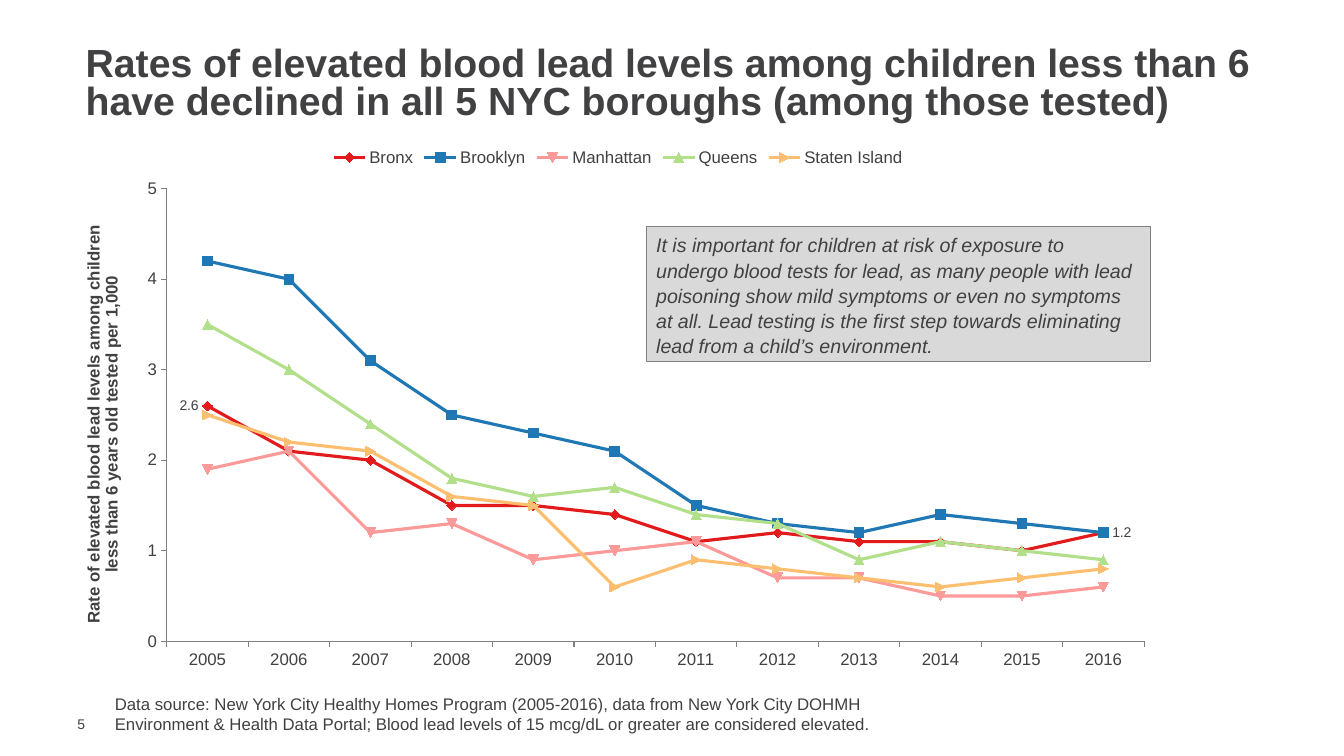
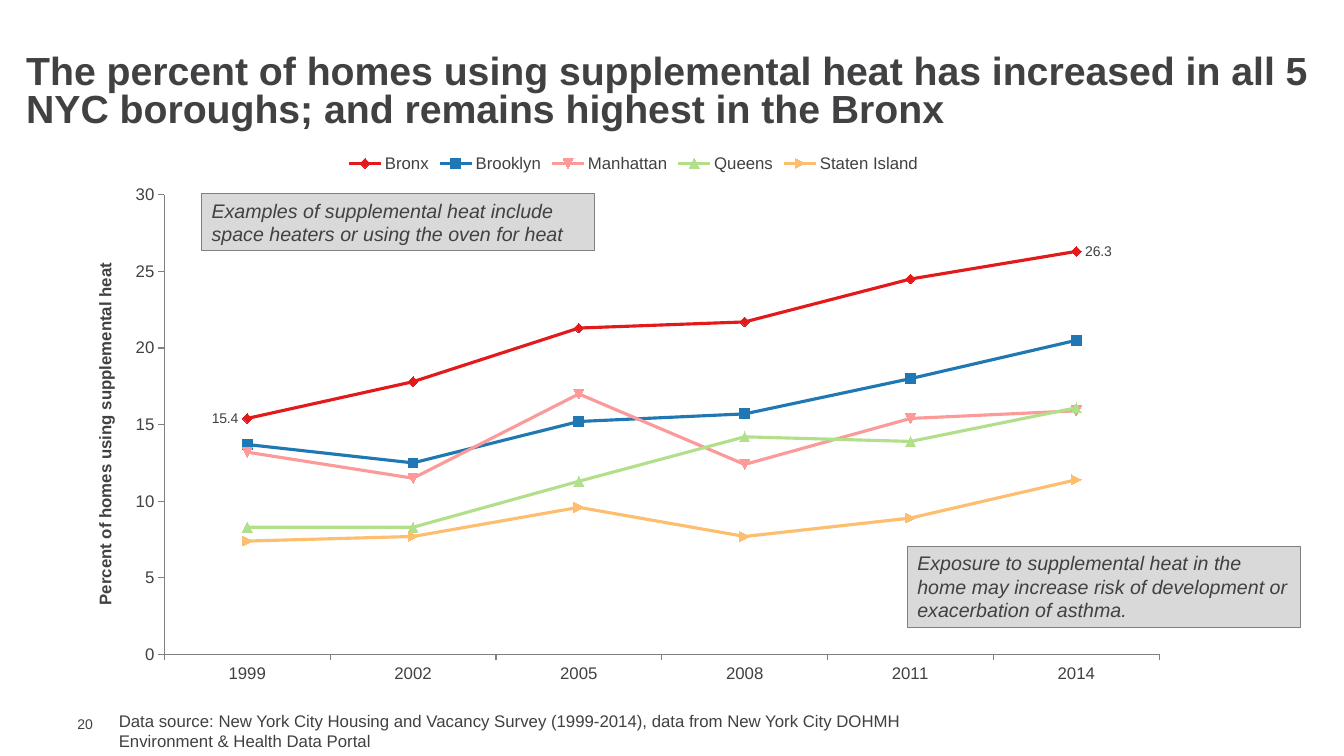
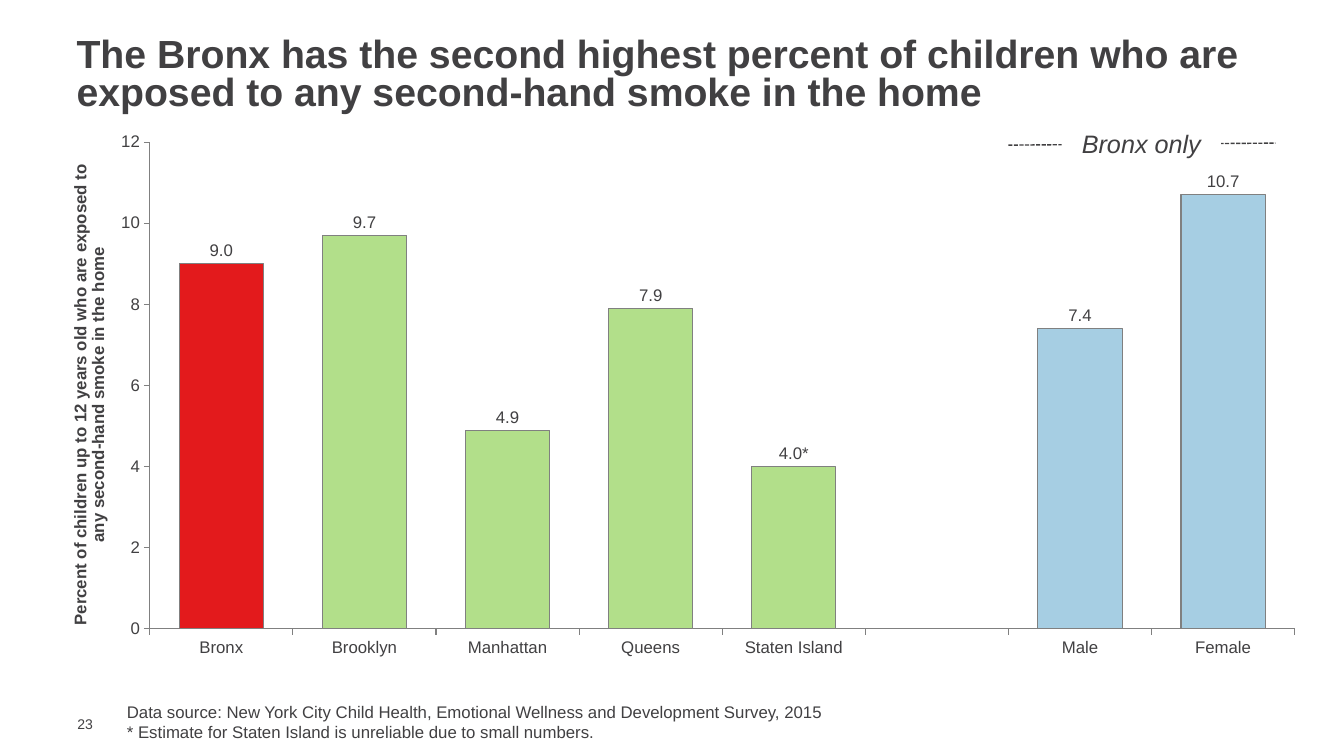
import pptx
import pptx.chart.data
import pptx.dml.color
import pptx.enum.chart
import pptx.enum.dml
import pptx.enum.shapes
import pptx.enum.text
import pptx.oxml
import pptx.oxml.ns
import pptx.util

Inches = pptx.util.Inches
Pt = pptx.util.Pt
RGBColor = pptx.dml.color.RGBColor
ALIGN = pptx.enum.text.PP_ALIGN
ANCHOR = pptx.enum.text.MSO_ANCHOR
KIND = pptx.enum.chart.XL_CHART_TYPE
MARK = pptx.enum.chart.XL_MARKER_STYLE
SIDE = pptx.enum.chart.XL_LABEL_POSITION

FONT = "Arial"
INK = RGBColor(0x41, 0x40, 0x42)
GRAY = RGBColor(0x80, 0x80, 0x80)
PALE = RGBColor(0xD9, 0xD9, 0xD9)
WHITE = RGBColor(0xFF, 0xFF, 0xFF)
RED = RGBColor(0xE3, 0x1A, 0x1C)
BLUE = RGBColor(0x1F, 0x78, 0xB4)
PINK = RGBColor(0xFB, 0x9A, 0x99)
GREEN = RGBColor(0xB2, 0xDF, 0x8A)
GOLD = RGBColor(0xFD, 0xBF, 0x6F)
SKY = RGBColor(0xA6, 0xCE, 0xE3)

TOWNS = ["Bronx", "Brooklyn", "Manhattan", "Queens", "Staten Island"]
LOOKS = [(RED, MARK.DIAMOND), (BLUE, MARK.SQUARE), (PINK, MARK.AUTOMATIC),
         (GREEN, MARK.AUTOMATIC), (GOLD, MARK.AUTOMATIC)]


def style(font, size, bold=False, italic=False):
    font.name = FONT
    font.size = Pt(size)
    font.bold = bold
    font.italic = italic
    font.color.rgb = INK


def write(frame, text, size=12, bold=False, italic=False, align=ALIGN.LEFT,
          space=None, anchor=ANCHOR.TOP):
    frame.word_wrap = True
    frame.vertical_anchor = anchor
    for i, line in enumerate(text.split("\n")):
        para = frame.paragraphs[0] if i == 0 else frame.add_paragraph()
        para.alignment = align
        if space:
            para.line_spacing = space
        run = para.add_run()
        run.text = line
        style(run.font, size, bold, italic)


def add_text(slide, text, left, top, width, height, **look):
    box = slide.shapes.add_textbox(Inches(left), Inches(top), Inches(width), Inches(height))
    write(box.text_frame, text, **look)
    return box.text_frame


def add_note(slide, text, left, top, width, height, fill=PALE, edge=GRAY, size=14, **look):
    box = slide.shapes.add_shape(pptx.enum.shapes.MSO_SHAPE.RECTANGLE, Inches(left),
                                 Inches(top), Inches(width), Inches(height))
    box.shadow.inherit = False
    box.fill.solid()
    box.fill.fore_color.rgb = fill
    if edge is None:
        box.line.fill.background()
    else:
        box.line.color.rgb = edge
        box.line.width = Pt(0.75)
    write(box.text_frame, text, size=size, italic=True, **look)


def add_dash(slide, start, end):
    dash = slide.shapes.add_connector(pptx.enum.shapes.MSO_CONNECTOR.STRAIGHT,
                                      *(Inches(n) for n in start + end))
    dash.line.color.rgb = INK
    dash.line.width = Pt(1)
    dash.line.dash_style = pptx.enum.dml.MSO_LINE.SQUARE_DOT
    dash._element.spPr.append(pptx.oxml.parse_xml(
        '<a:effectLst %s/>' % pptx.oxml.ns.nsdecls("a")))


def start_slide(deck, title, spot, number, source, base):
    slide = deck.slides.add_slide(deck.slide_layouts[5])
    head = slide.shapes.title
    left, top = spot
    head.left, head.top = Inches(left), Inches(top)
    head.width, head.height = Inches(13.33 - left), Inches(0.85)
    write(head.text_frame, title, size=28, bold=True, space=0.8, anchor=ANCHOR.MIDDLE)
    page = add_text(slide, number, 0.67, 7.1, 0.43, 0.17, size=10, anchor=ANCHOR.MIDDLE)
    page.margin_top = page.margin_bottom = page.margin_right = 0
    add_text(slide, source, *base, 9.92, 0.5)
    return slide


def place_plot(chart, frame):
    area = chart._chartSpace.chart.plotArea
    for old in area.findall(pptx.oxml.ns.qn("c:layout")):
        area.remove(old)
    sizes = "".join('<c:%s val="%s"/>' % pair for pair in zip("xywh", frame))
    area.insert(0, pptx.oxml.parse_xml(
        '<c:layout %s><c:manualLayout><c:layoutTarget val="inner"/>'
        '<c:xMode val="edge"/><c:yMode val="edge"/>%s</c:manualLayout></c:layout>'
        % (pptx.oxml.ns.nsdecls("c"), sizes)))


def add_chart(slide, kind, spot, cats, rows, title, top, step, plot, form="#,##0"):
    data = pptx.chart.data.CategoryChartData()
    data.categories = cats
    for name, values in rows:
        data.add_series(name, values)
    chart = slide.shapes.add_chart(kind, *(Inches(n) for n in spot), data).chart
    chart.has_title = False
    chart.has_legend = False
    style(chart.font, 12)
    place_plot(chart, plot)
    for axis in (chart.category_axis, chart.value_axis):
        axis.has_major_gridlines = False
        axis.major_tick_mark = pptx.enum.chart.XL_TICK_MARK.OUTSIDE
        axis.minor_tick_mark = pptx.enum.chart.XL_TICK_MARK.NONE
        axis.format.line.color.rgb = GRAY
        axis.format.line.width = Pt(0.75)
        style(axis.tick_labels.font, 12)
    scale = chart.value_axis
    scale.minimum_scale, scale.maximum_scale, scale.major_unit = 0, top, step
    scale.tick_labels.number_format = form
    scale.tick_labels.number_format_is_linked = False
    frame = scale.axis_title.text_frame
    run = frame.paragraphs[0].add_run()
    run.text = title
    style(run.font, 12, bold=True)
    frame._txBody.bodyPr.set("rot", "-5400000")
    return chart


def add_lines(slide, spot, years, values, title, top, step, plot):
    chart = add_chart(slide, KIND.LINE_MARKERS, spot, years, list(zip(TOWNS, values)),
                      title, top, step, plot)
    chart.has_legend = True
    chart.legend.position = pptx.enum.chart.XL_LEGEND_POSITION.TOP
    chart.legend.include_in_layout = False
    style(chart.legend.font, 12)
    for row, (color, mark) in zip(chart.plots[0].series, LOOKS):
        row.smooth = False
        row.format.line.color.rgb = color
        row.format.line.width = Pt(2.25)
        row.marker.style = mark
        row.marker.size = 7
        row.marker.format.fill.solid()
        row.marker.format.fill.fore_color.rgb = color
        row.marker.format.line.color.rgb = color
    bronx = chart.plots[0].series[0]
    bronx.data_labels.show_value = False
    for i, side in ((0, SIDE.LEFT), (len(years) - 1, SIDE.RIGHT)):
        label = bronx.points[i].data_label
        style(label.font, 10)
        label.position = side


def add_bars(slide, spot, cats, values, title, top, step, plot):
    chart = add_chart(slide, KIND.COLUMN_CLUSTERED, spot, cats, [("Series 1", values)],
                      title, top, step, plot, form="0")
    bars = chart.plots[0]
    bars.gap_width = 70
    bars.vary_by_categories = False
    row = bars.series[0]
    tints = {0: RED, 6: SKY, 7: SKY}
    for part, tint in [(row, GREEN)] + [(row.points[i], c) for i, c in tints.items()]:
        part.format.fill.solid()
        part.format.fill.fore_color.rgb = tint
        part.format.line.color.rgb = GRAY
        part.format.line.width = Pt(0.75)
    labels = row.data_labels
    labels.show_value = True
    labels.number_format = "#,##0.0"
    labels.number_format_is_linked = False
    labels.position = SIDE.OUTSIDE_END
    style(labels.font, 12)
    star = row.points[4].data_label
    run = star.text_frame.paragraphs[0].add_run()
    run.text = "4.0*"
    style(run.font, 12)
    star.position = SIDE.OUTSIDE_END


def lead_slide(deck):
    slide = start_slide(
        deck, "Rates of elevated blood lead levels among children less than 6 have declined "
        "in all 5 NYC boroughs (among those tested)", (0.75, 0.42), "5",
        "Data source: New York City Healthy Homes Program (2005-2016), data from New York "
        "City DOHMH\nEnvironment & Health Data Portal; Blood lead levels of 15 mcg/dL or "
        "greater are considered elevated.", (1.04, 6.83))
    add_lines(slide, (0.75, 1.36, 10.76, 5.45), [str(y) for y in range(2005, 2017)], [
        [2.6, 2.1, 2, 1.5, 1.5, 1.4, 1.1, 1.2, 1.1, 1.1, 1, 1.2],
        [4.2, 4, 3.1, 2.5, 2.3, 2.1, 1.5, 1.3, 1.2, 1.4, 1.3, 1.2],
        [1.9, 2.1, 1.2, 1.3, 0.9, 1, 1.1, 0.7, 0.7, 0.5, 0.5, 0.6],
        [3.5, 3, 2.4, 1.8, 1.6, 1.7, 1.4, 1.3, 0.9, 1.1, 1, 0.9],
        [2.5, 2.2, 2.1, 1.6, 1.5, 0.6, 0.9, 0.8, 0.7, 0.6, 0.7, 0.8],
    ], "Rate of elevated blood lead levels among children less than 6 years old tested "
        "per 1,000", 5, 1, (0.084, 0.094, 0.901, 0.824))
    add_note(slide, "It is important for children at risk of exposure to undergo blood tests "
             "for lead, as many people with lead poisoning show mild symptoms or even no "
             "symptoms at all. Lead testing is the first step towards eliminating lead from "
             "a child’s environment.", 6.41, 2.25, 5, 1.34, space=Pt(18))


def heat_slide(deck):
    slide = start_slide(
        deck, "The percent of homes using supplemental heat has increased in all 5 NYC "
        "boroughs; and remains highest in the Bronx", (0.16, 0.5), "20",
        "Data source: New York City Housing and Vacancy Survey (1999-2014), data from New "
        "York City DOHMH\nEnvironment & Health Data Portal", (1.08, 7))
    add_lines(slide, (0.91, 1.42, 10.75, 5.45), [str(y) for y in range(1999, 2015, 3)], [
        [15.4, 17.8, 21.3, 21.7, 24.5, 26.3],
        [13.7, 12.5, 15.2, 15.7, 18, 20.5],
        [13.2, 11.5, 17, 12.4, 15.4, 15.9],
        [8.3, 8.3, 11.3, 14.2, 13.9, 16.1],
        [7.4, 7.7, 9.6, 7.7, 8.9, 11.4],
    ], "Percent of homes using supplemental heat", 30, 5, (0.067, 0.094, 0.918, 0.837))
    add_note(slide, "Exposure to supplemental heat in the home may increase risk of "
             "development or exacerbation of asthma.", 9, 5.42, 3.9, 0.81)
    add_note(slide, "Examples of supplemental heat include space heaters or using the oven "
             "for heat", 2, 1.92, 3.9, 0.57)


def smoke_slide(deck):
    slide = start_slide(
        deck, "The Bronx has the second highest percent of children who are exposed to any "
        "second-hand smoke in the home", (0.66, 0.33), "23",
        "Data source: New York City Child Health, Emotional Wellness and Development Survey, "
        "2015\n* Estimate for Staten Island is unreliable due to small numbers.", (1.16, 6.91))
    add_bars(slide, (0.66, 1.25, 12.33, 5.92), TOWNS + ["", "Male", "Female"],
             [9, 9.7, 4.9, 7.9, 4, None, 7.4, 10.7],
             "Percent of children up to 12 years old who are exposed to any second-hand "
             "smoke in the home", 12, 2, (0.067, 0.027, 0.921, 0.816))
    add_dash(slide, (10, 1.44), (12.65, 1.42))
    add_note(slide, "Bronx only", 10.53, 1.22, 1.58, 0.4, fill=WHITE, edge=None, size=18,
             align=ALIGN.CENTER)


def main():
    deck = pptx.Presentation()
    deck.slide_width = Inches(13.33)
    deck.slide_height = Inches(7.5)
    lead_slide(deck)
    heat_slide(deck)
    smoke_slide(deck)
    deck.save("out.pptx")


if __name__ == "__main__":
    main()
